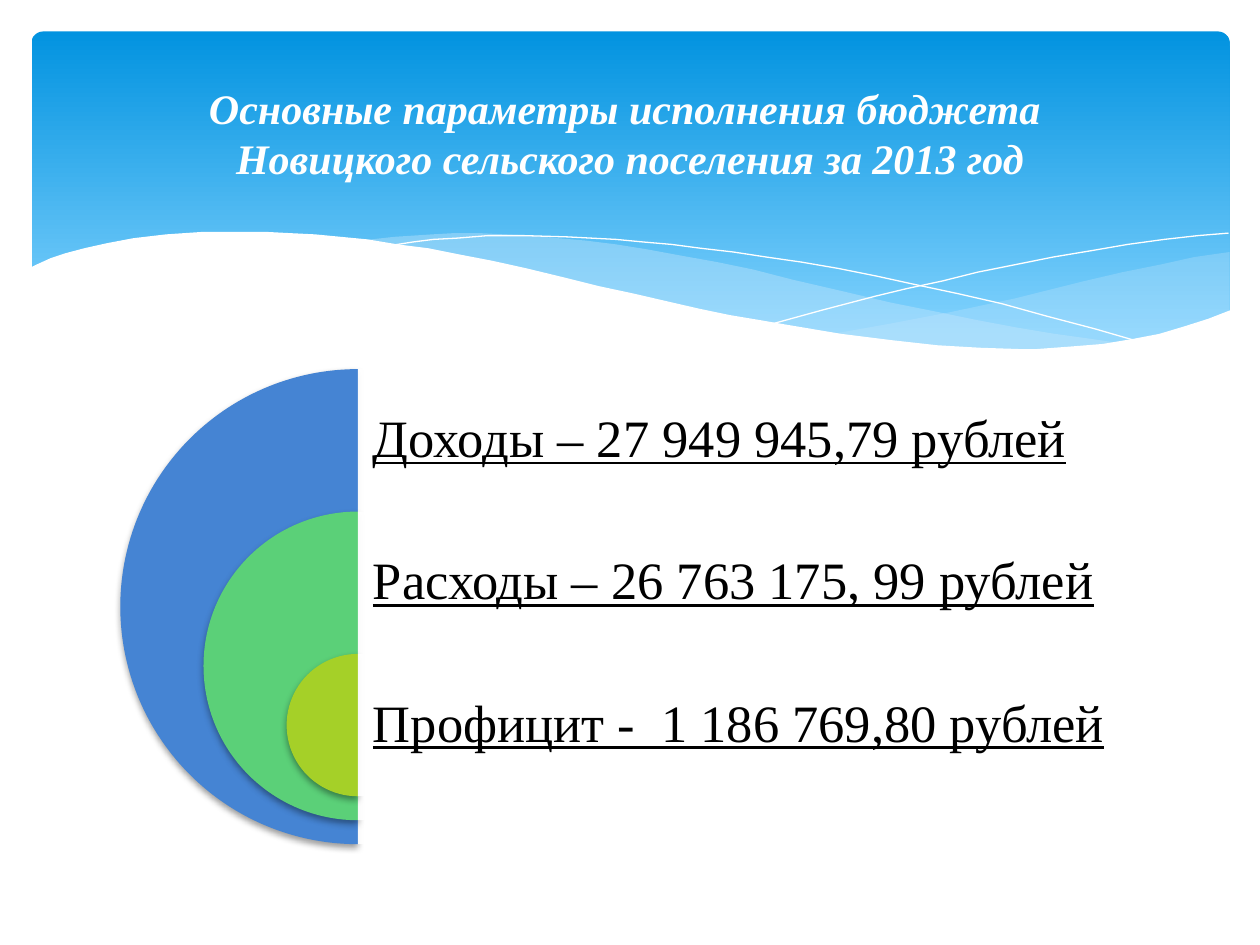
import lxml.etree
import pptx
import pptx.dml.color
import pptx.enum.shapes
import pptx.enum.text
import pptx.oxml
import pptx.oxml.ns
import pptx.util

Inches = pptx.util.Inches
Pt = pptx.util.Pt
RGB = pptx.dml.color.RGBColor.from_string
SHAPES = pptx.enum.shapes.MSO_SHAPE
ALIGN = pptx.enum.text.PP_ALIGN
qn = pptx.oxml.ns.qn

THEME = {
    "font": "Times New Roman",
    "title_size": 24,
    "item_size": 30,
    "white": "FFFFFF",
    "black": "000000",
    "sky_top": "0293E0",
    "sky_bottom": "83D3FE",
    "wave": "C6E7FC",
    "income": "4584D3",
    "expense": "5BD078",
    "surplus": "A5D028",
}


def paint(shape, color=None, opacity=100, line=None):
    shape.shadow.inherit = False
    if color:
        shape.fill.solid()
        shape.fill.fore_color.rgb = RGB(color)
        if opacity < 100:
            fill_color = shape.fill._xPr.find(qn("a:solidFill"))[0]
            alpha = lxml.etree.SubElement(fill_color, qn("a:alpha"))
            alpha.set("val", str(opacity * 1000))
    else:
        shape.fill.background()
    if line:
        shape.line.color.rgb = RGB(line)
        shape.line.width = Pt(0)
    else:
        shape.line.fill.background()


def add_text(text, left, top, width, height, size, color, inset=0.1, spacing=1.0,
             align=ALIGN.LEFT, bold=False, italic=False, underline=False):
    box = slide.shapes.add_textbox(Inches(left), Inches(top), Inches(width), Inches(height))
    frame = box.text_frame
    frame.word_wrap = True
    frame.vertical_anchor = pptx.enum.text.MSO_ANCHOR.MIDDLE
    frame.margin_left = frame.margin_right = Inches(inset)
    frame.margin_top = frame.margin_bottom = Inches(min(inset, 0.12))
    paragraph = frame.paragraphs[0]
    paragraph.text = text
    paragraph.alignment = align
    paragraph.line_spacing = spacing
    for run in paragraph.runs:
        run.font.name = THEME["font"]
        run.font.size = Pt(size)
        run.font.color.rgb = RGB(color)
        run.font.bold = bold
        run.font.italic = italic
        run.font.underline = underline


presentation = pptx.Presentation()
presentation.slide_width = Inches(10)
presentation.slide_height = Inches(7.5)
slide = presentation.slides.add_slide(presentation.slide_layouts[6])

header = slide.shapes.add_shape(
    SHAPES.ROUNDED_RECTANGLE, Inches(0.25), Inches(0.25), Inches(9.51), Inches(2.7))
header.adjustments[0] = 0.034
paint(header)
header.fill.gradient()
header.fill.gradient_angle = 270
stops = [(0, THEME["sky_top"]), (0.9, THEME["sky_bottom"])]
for stop, (position, color) in zip(header.fill.gradient_stops, stops):
    stop.position = position
    stop.color.rgb = RGB(color)

right_wave = [
    (976, 200), (948, 204), (921, 210), (891, 216), (861, 223), (805, 237), (753, 248),
    (706, 257), (661, 265), (691, 269), (719, 272), (745, 275), (769, 277), (803, 278),
    (835, 277), (863, 275), (889, 272), (913, 267), (935, 262), (949, 257), (963, 252),
    (976, 247),
]
left_wave = [
    (893, 273), (866, 269), (837, 265), (807, 260), (775, 254), (741, 247), (706, 240),
    (668, 231), (629, 222), (598, 214), (569, 208), (541, 203), (514, 198), (489, 194),
    (465, 191), (442, 189), (420, 187), (399, 186), (380, 185), (361, 185), (344, 186),
    (313, 188), (286, 191), (323, 196), (362, 203), (404, 211), (449, 222), (491, 232),
    (530, 240), (566, 248), (601, 255), (634, 261), (665, 266), (695, 270), (722, 274),
    (748, 276), (773, 277), (796, 278), (838, 278), (867, 276),
]
falling_line = [
    (309, 195), (328, 192), (344, 190), (363, 189), (387, 187), (416, 187), (450, 188),
    (489, 190), (510, 192), (533, 194), (556, 197), (582, 200), (608, 204), (636, 208),
    (665, 213), (695, 219), (727, 226), (760, 233), (795, 241), (831, 251), (869, 261),
    (907, 272),
]
rising_line = [
    (613, 257), (653, 246), (695, 235), (720, 229), (748, 223), (776, 216), (806, 210),
    (836, 204), (866, 199), (895, 194), (924, 190), (951, 187), (975, 185),
]
white_wave = [
    (977, 246), (959, 253), (940, 259), (920, 265), (899, 269), (875, 273), (850, 275),
    (823, 277), (809, 277), (778, 276), (744, 274), (708, 270), (668, 265), (626, 258),
    (603, 254), (579, 250), (555, 245), (529, 239), (503, 233), (475, 227), (447, 220),
    (418, 213), (391, 207), (365, 202), (340, 197), (316, 194), (292, 190), (271, 188),
    (250, 186), (230, 185), (211, 184), (161, 184), (132, 186), (106, 189), (85, 193),
    (67, 197), (52, 201), (40, 205), (29, 210), (23, 213), (23, 329), (977, 329),
]
waves = [
    (right_wave, THEME["wave"], 29, None),
    (left_wave, THEME["wave"], 40, None),
    (falling_line, None, 100, THEME["white"]),
    (rising_line, None, 100, THEME["white"]),
    (white_wave, THEME["white"], 100, None),
]
for points, color, opacity, line in waves:
    builder = slide.shapes.build_freeform(*points[0], scale=Inches(0.01))
    builder.add_line_segments(points[1:], close=line is None)
    paint(builder.convert_to_shape(), color, opacity, line)

center_x = 2.84
row_top = 2.93
row_height = 1.13
text_width = 6.22
items = [
    ("Доходы – 27 949 945,79 рублей", 3.77, THEME["income"]),
    ("Расходы – 26 763 175, 99 рублей", 2.45, THEME["expense"]),
    ("Профицит -  1 186 769,80 рублей", 1.13, THEME["surplus"]),
]
for index, (label, diameter, color) in enumerate(items):
    top = row_top + index * row_height
    half_disc = slide.shapes.add_shape(
        SHAPES.PIE, Inches(center_x - diameter / 2), Inches(top),
        Inches(diameter), Inches(diameter))
    half_disc.adjustments[0] = 54
    half_disc.adjustments[1] = 162
    paint(half_disc, color)
    effects = half_disc._element.spPr.find(qn("a:effectLst"))
    shadow = lxml.etree.SubElement(
        effects, qn("a:outerShdw"), blurRad=str(Pt(4)), dist=str(Pt(2)),
        dir="5400000", rotWithShape="0")
    shadow_color = lxml.etree.SubElement(shadow, qn("a:srgbClr"), val=THEME["black"])
    lxml.etree.SubElement(shadow_color, qn("a:alpha"), val="38000")

    panel = slide.shapes.add_shape(
        SHAPES.RECTANGLE, Inches(center_x), Inches(top), Inches(text_width), Inches(diameter))
    paint(panel, THEME["white"], 90)
    add_text(label, center_x, top, text_width, row_height, THEME["item_size"],
             THEME["black"], inset=0.12, spacing=0.9, underline=True)

add_text("Основные параметры исполнения бюджета \nНовицкого сельского поселения за 2013 год",
         0.5, 0.37, 9, 1.37, THEME["title_size"], THEME["white"],
         align=ALIGN.CENTER, bold=True, italic=True)

presentation.save("out.pptx")
